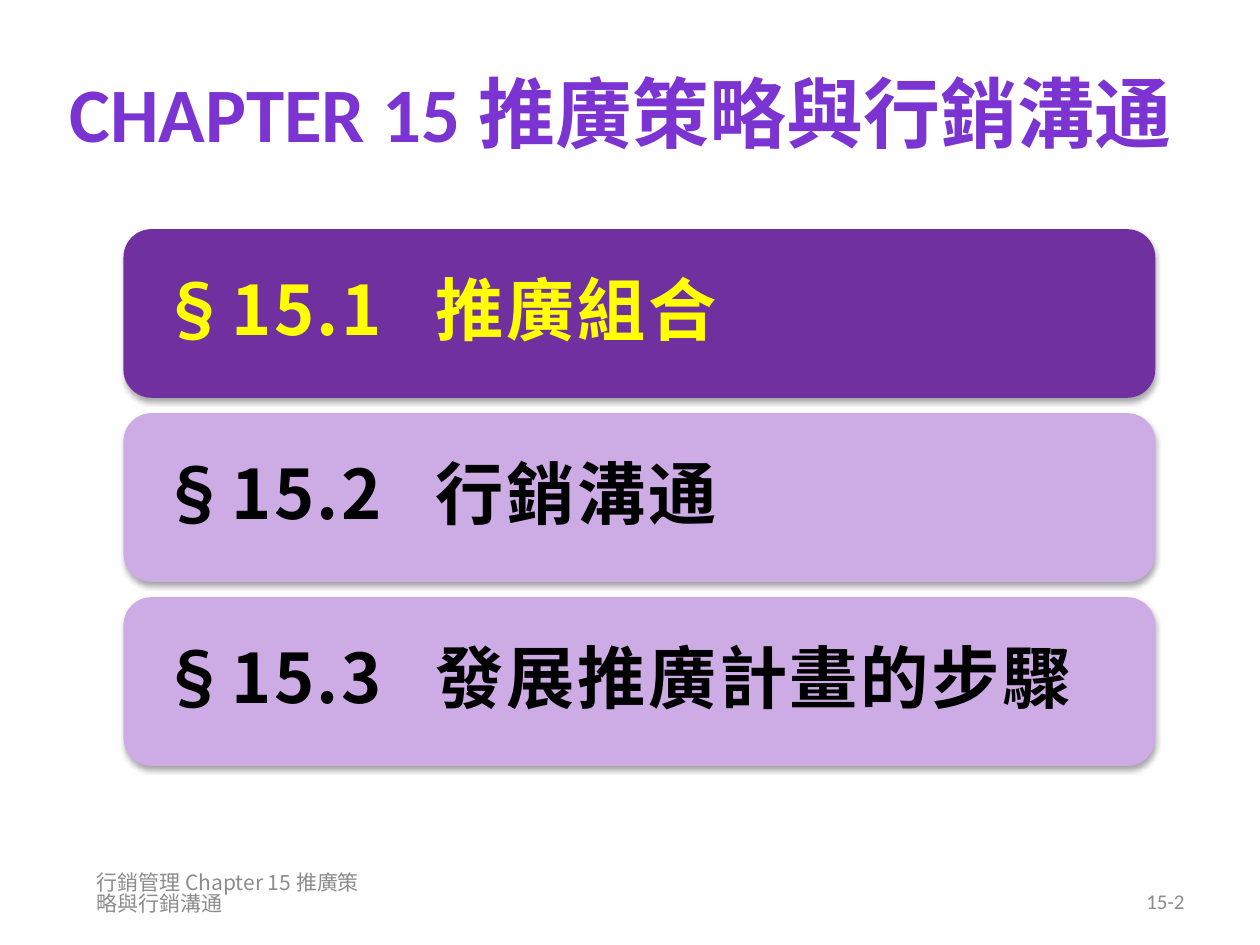
from lxml import etree
from pptx import Presentation
from pptx import util as u
from pptx.dml.color import RGBColor
from pptx.enum import shapes, text
from pptx.oxml import ns

CJK = "Noto Sans CJK SC"
SECTIONS = [
    ("§15.1", "推廣組合", "7030A0", "FFFF00"),
    ("§15.2", "行銷溝通", "CDACE6", "000000"),
    ("§15.3", "發展推廣計畫的步驟", "CDACE6", "000000"),
]


def colour(value):
    """Turn a hex string into a colour."""
    return RGBColor.from_string(value)


def add_node(parent, tag, **attributes):
    """Append a DrawingML element to its parent."""
    return etree.SubElement(parent, ns.qn(tag), attributes)


def style(para, face, size, shade, bold=False, spacing=0):
    """Set the paragraph font for Latin and East Asian text."""
    font = para.font
    font.name, font.size, font.bold = face, u.Pt(size), bold
    font.color.rgb = colour(shade)
    properties = para._p.pPr.find(ns.qn("a:defRPr"))
    add_node(properties, "a:ea", typeface=face)
    if spacing:
        properties.set("spc", str(spacing))


def add_shadow(shape):
    """Give a shape a soft shadow below it."""
    shape.shadow.inherit = False
    effects = shape._element.spPr.find(ns.qn("a:effectLst"))
    shadow = add_node(effects, "a:outerShdw", blurRad=str(u.Pt(3.1)),
                      dist=str(u.Pt(1.8)), dir="5400000", rotWithShape="0")
    add_node(add_node(shadow, "a:srgbClr", val="000000"), "a:alpha", val="35000")


def set_title(page, left, top, width, height):
    """Place and format the chapter title."""
    title = page.shapes.title
    title.left, title.top, title.width, title.height = left, top, width, height
    frame = title.text_frame
    frame.text = "CHAPTER 15 推廣策略與行銷溝通"
    frame.word_wrap = True
    frame.auto_size = text.MSO_AUTO_SIZE.NONE
    frame.vertical_anchor = text.MSO_ANCHOR.MIDDLE
    para = frame.paragraphs[0]
    para.alignment = text.PP_ALIGN.CENTER
    style(para, "Calibri", 44, "7B34D2", bold=True)


def add_sections(page, left, top, width, height):
    """Stack the section bars evenly in the given box."""
    gap = u.Cm(0.31)
    bar_height = (height - gap * (len(SECTIONS) - 1)) // len(SECTIONS)
    for index, (number, name, fill, ink) in enumerate(SECTIONS):
        bar = page.shapes.add_shape(
            shapes.MSO_SHAPE.ROUNDED_RECTANGLE,
            left, top + index * (bar_height + gap), width, bar_height)
        bar.fill.solid()
        bar.fill.fore_color.rgb = colour(fill)
        bar.line.fill.background()
        add_shadow(bar)
        frame = bar.text_frame
        frame.word_wrap = True
        frame.margin_left = frame.margin_right = u.Cm(0.58)
        frame.vertical_anchor = text.MSO_ANCHOR.MIDDLE
        para = frame.paragraphs[0]
        para.text = f"{number}\t{name}"
        para.alignment = text.PP_ALIGN.LEFT
        para.line_spacing = 0.9
        tabs = add_node(para._p.get_or_add_pPr(), "a:tabLst")
        add_node(tabs, "a:tab", pos=str(u.Cm(5.55)), algn="l")
        style(para, CJK, 39, ink, bold=True, spacing=150)


def add_footer(page, left, top, width, height, words, face, align, spacing):
    """Add one grey footer text."""
    frame = page.shapes.add_textbox(left, top, width, height).text_frame
    frame.word_wrap = True
    frame.vertical_anchor = text.MSO_ANCHOR.MIDDLE
    para = frame.paragraphs[0]
    para.text = words
    para.alignment = align
    para.line_spacing = spacing
    style(para, face, 12, "8C8C8C")


def main():
    """Build and save the chapter outline slide."""
    deck = Presentation()
    deck.slide_width, deck.slide_height = u.Cm(25.4), u.Cm(19.05)
    page = deck.slides.add_slide(deck.slide_layouts[5])
    set_title(page, u.Cm(1.09), u.Cm(0.74), u.Cm(22.86), u.Cm(3.02))
    add_sections(page, u.Cm(2.49), u.Cm(4.62), u.Cm(20.8), u.Cm(10.82))
    add_footer(page, u.Cm(1.7), u.Cm(17.53), u.Cm(6.2), u.Cm(1.02),
               "行銷管理 Chapter 15 推廣策略與行銷溝通", CJK,
               text.PP_ALIGN.LEFT, 0.83)
    add_footer(page, u.Cm(18.21), u.Cm(17.65), u.Cm(5.92), u.Cm(1.02),
               "15-2", "Calibri", text.PP_ALIGN.RIGHT, 1.0)
    deck.save("out.pptx")


if __name__ == "__main__":
    main()
